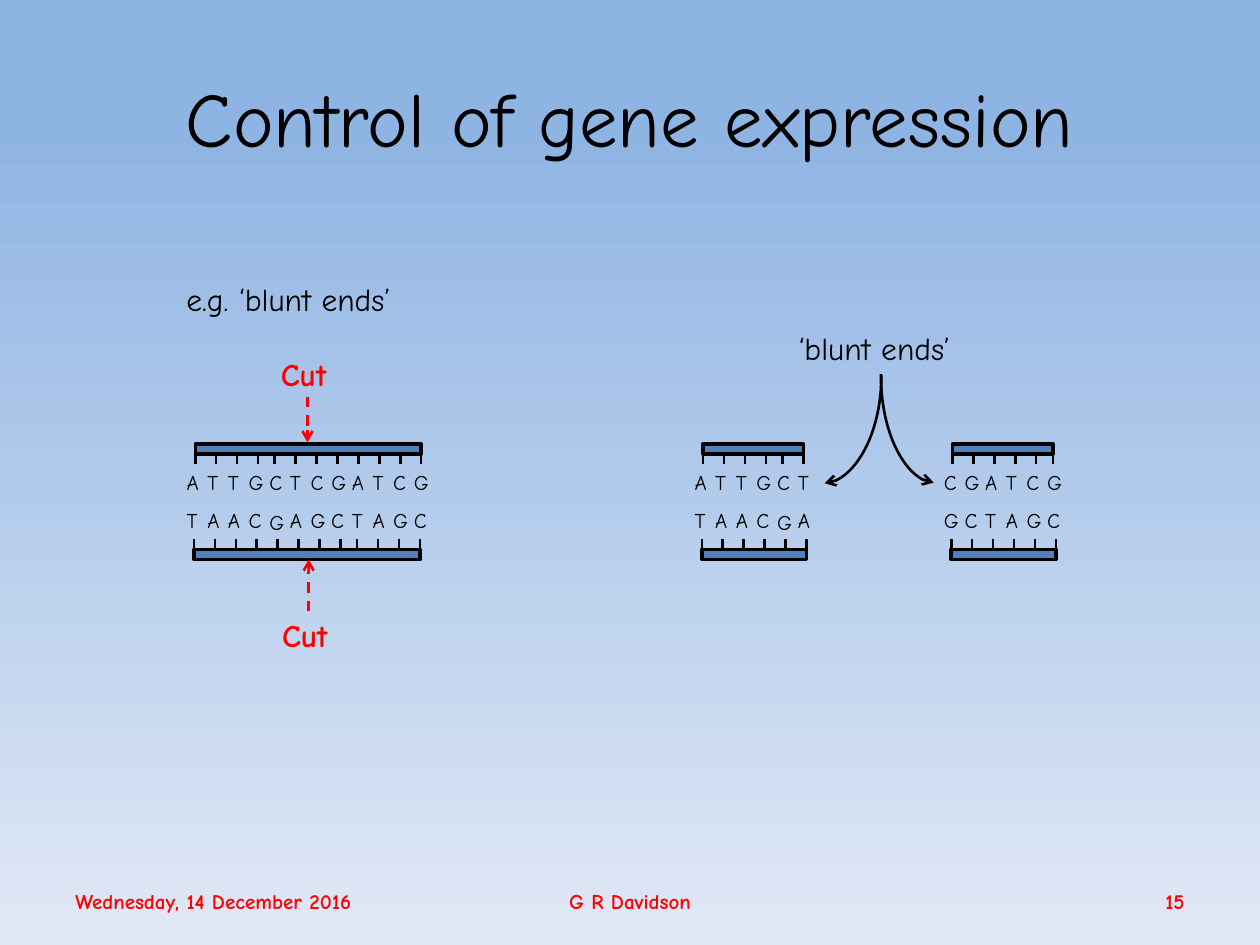
from lxml.etree import SubElement
from pptx import Presentation
from pptx.dml.color import RGBColor
from pptx.enum.dml import MSO_LINE
from pptx.enum.shapes import MSO_CONNECTOR as LinkKind, MSO_SHAPE as ShapeKind
from pptx.enum.text import MSO_ANCHOR as Anchor, MSO_AUTO_SIZE as AutoSize, PP_ALIGN as Align
from pptx.oxml.ns import qn
from pptx.util import Pt

FONT = "Comic Neue"
BLACK, RED, BLUE = "000000", "FF0000", "4F81BD"
TICK_PITCH, SHORT_GAP, BASE_PITCH = 11.95, 2.4, 11.8
LABEL_FRAME = {"word_wrap": False, "auto_size": AutoSize.SHAPE_TO_FIT_TEXT}
FOOTER_FRAME = {"word_wrap": True, "vertical_anchor": Anchor.MIDDLE}


def paint(color, hex_code):
    color.rgb = RGBColor.from_string(hex_code)


def apply(target, values):
    for attribute, value in values.items():
        setattr(target, attribute, value)


def write(holder, wording, size, color=BLACK, bold=False, align=Align.LEFT, frame=LABEL_FRAME):
    apply(holder.text_frame, frame)
    paragraph = holder.text_frame.paragraphs[0]
    paragraph.alignment = align
    run = paragraph.add_run()
    run.text = wording
    apply(run.font, {"name": FONT, "size": Pt(size), "bold": bold})
    paint(run.font.color, color)


def add_label(shapes, wording, left, top, width, height, size, **style):
    label = shapes.add_textbox(Pt(left), Pt(top), Pt(width), Pt(height))
    write(label, wording, size, **style)


def add_line(shapes, start, end, color=BLACK, dashed=False, arrow=False, kind=LinkKind.STRAIGHT):
    link = shapes.add_connector(kind, *map(Pt, start + end))
    link.line.width = Pt(1.5)
    paint_line = link.line.fill
    paint_line.solid()
    paint(paint_line.fore_color, color)
    if dashed:
        link.line.dash_style = MSO_LINE.DASH
    properties = link.element.spPr
    if arrow:
        SubElement(properties.find(qn("a:ln")), qn("a:tailEnd"), type="arrow")
    SubElement(properties, qn("a:effectLst"))
    return link


def add_curve(shapes, start, end, quarter_turns):
    curve = add_line(shapes, start, end, arrow=True, kind=LinkKind.CURVE)
    properties = curve.element.spPr
    properties.find(qn("a:prstGeom")).set("prst", "curvedConnector2")
    properties.find(qn("a:xfrm")).set("rot", str(quarter_turns * 5400000))


def add_backbone(shapes, left, top, width):
    backbone = shapes.add_shape(ShapeKind.RECTANGLE, Pt(left), Pt(top), Pt(width), Pt(5.8))
    backbone.shadow.inherit = False
    backbone.fill.solid()
    paint(backbone.fill.fore_color, BLUE)
    paint(backbone.line.color, BLACK)
    backbone.line.width = Pt(2)


def add_strand(shapes, bases, left, bar_top, tick_from, tick_to, short_from):
    ticks = [left + i * TICK_PITCH - SHORT_GAP * (i >= short_from) for i in range(len(bases))]
    add_backbone(shapes, left, bar_top, ticks[-1] - left)
    for x in ticks:
        add_line(shapes, (x, tick_from), (x, tick_to))


def add_bases(shapes, bases, left, top, lowered=None):
    for i, base in enumerate(bases):
        width = 21.6 if base == "C" else 23
        drop = 1 if i == lowered else 0
        add_label(shapes, base, left + i * BASE_PITCH, top + drop, width, 21.6, 12)


def add_dna(slide, left, upper, lower, upper_short, lower_short, lowered=None):
    dna = slide.shapes.add_group_shape().shapes
    add_strand(dna, upper, left, 253.6, 259.2, 265, upper_short)
    add_bases(dna, upper, left - 12, 265)
    add_strand(dna, lower, left - 0.7, 313.9, 313.9, 308.2, lower_short)
    add_bases(dna, lower, left - 12, 286.6, lowered)


def add_cut(slide, x, line_from, line_to, label_top):
    cut = slide.shapes.add_group_shape().shapes
    add_line(cut, (x, line_from), (x, line_to), RED, dashed=True, arrow=True)
    add_label(cut, "Cut", x - 22.3, label_top, 44, 29, 18, color=RED, bold=True)


def set_background(slide):
    fill = slide.background.fill
    fill.gradient()
    fill.gradient_angle = 270
    for stop, (position, hex_code) in zip(fill.gradient_stops, [(0.13, "8EB4E3"), (1, "E1E8F5")]):
        stop.position = position
        paint(stop.color, hex_code)


def add_title(slide):
    title = slide.shapes.title
    apply(title, {"left": Pt(36), "top": Pt(21.6), "width": Pt(648), "height": Pt(90)})
    write(title, "Control of gene expression", 44, align=Align.CENTER,
          frame={"vertical_anchor": Anchor.MIDDLE})


def add_footers(slide):
    for wording, left, width, align in [
        ("Wednesday, 14 December 2016", 36, 239, Align.LEFT),
        ("G R Davidson", 246, 228, Align.CENTER),
        ("15", 516, 168, Align.RIGHT),
    ]:
        add_label(slide.shapes, wording, left, 500.5, width, 28.8, 12,
                  color=RED, bold=True, align=align, frame=FOOTER_FRAME)


def main():
    deck = Presentation()
    apply(deck, {"slide_width": Pt(720), "slide_height": Pt(540)})
    slide = deck.slides.add_slide(deck.slide_layouts[5])
    set_background(slide)
    add_title(slide)
    add_footers(slide)

    add_dna(slide, 111.6, "ATTGCTCGATCG", "TAACGAGCTAGC", 4, 8, lowered=4)
    add_cut(slide, 175.7, 226.8, 252.7, 199.4)
    add_cut(slide, 176.4, 349.2, 319.7, 348.5)
    add_label(slide.shapes, "e.g. ‘blunt ends’", 99.4, 156.2, 142.6, 29, 18)

    add_dna(slide, 401.8, "ATTGCT", "TAACGA", 4, 6, lowered=4)
    add_dna(slide, 544.3, "CGATCG", "GCTAGC", 5, 6)
    add_label(slide.shapes, "‘blunt ends’", 449.3, 184.3, 108.7, 29, 18)
    add_curve(slide.shapes, (456.5, 229), (518.4, 261.4), 1)
    add_curve(slide.shapes, (549.4, 229.7), (487.4, 259.9), 3)

    deck.save("out.pptx")


if __name__ == "__main__":
    main()
